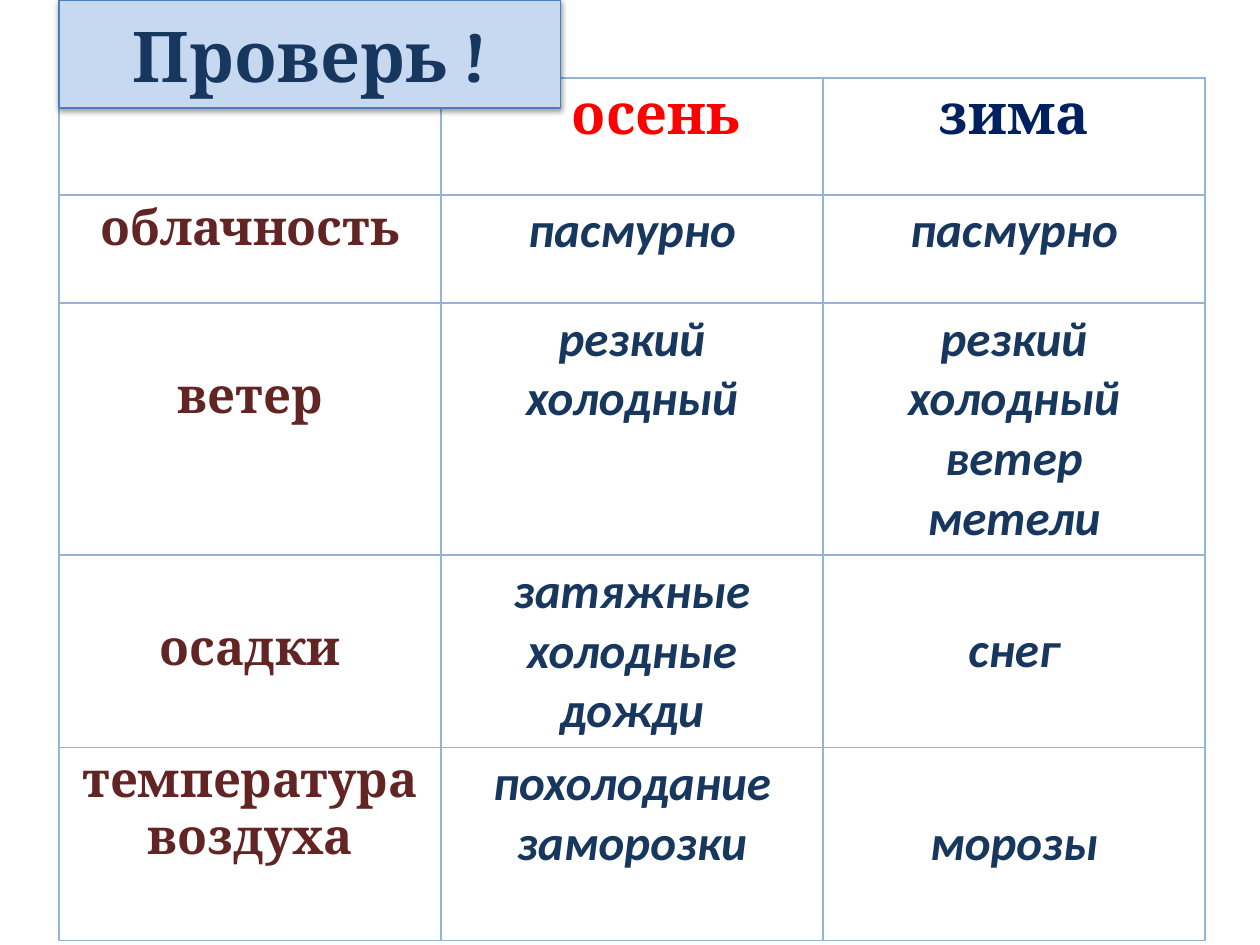
from lxml import etree
from pptx import Presentation
from pptx.dml.color import RGBColor
from pptx.enum.shapes import MSO_SHAPE as Shape
from pptx.enum.text import MSO_ANCHOR as Anchor, PP_ALIGN as Align
from pptx.oxml import parse_xml
from pptx.oxml.ns import nsdecls, qn
from pptx.util import Cm, Pt

NAVY = RGBColor(0x17, 0x37, 0x5E)
DARK_BLUE = RGBColor(0x00, 0x20, 0x60)
RED = RGBColor(0xFF, 0x00, 0x00)
MAROON = RGBColor(0x63, 0x25, 0x23)
PALE_BLUE = RGBColor(0xC6, 0xD9, 0xF1)
FRAME_BLUE = RGBColor(0x4B, 0x7E, 0xBC)
GRID_BLUE = RGBColor(0x95, 0xB3, 0xD7)
TITLE_EDGE = RGBColor(0x46, 0x7A, 0xB8)
PINK_EDGE = RGBColor(0xFF, 0xCC, 0xCC)
CREAM_EDGE = RGBColor(0xFF, 0xFF, 0xCC)

LEFT = Cm(1.19)
COLUMN_WIDTH = Cm(7.7)
ROW_HEIGHTS = [2.36, 2.18, 3.15, 3.78, 3.89]
LOWERED = Cm(1.33)  # top margin of cells whose text starts one line down
INDENTED = Cm(1.22)  # left margin of the heading beside the title

ROWS = [
    ("облачность", "пасмурно", "пасмурно"),
    ("ветер", "резкий\nхолодный", "резкий холодный ветер\nметели"),
    ("осадки", "затяжные холодные дожди", "снег"),
    ("температура воздуха", "похолодание заморозки", "морозы"),
]
LOWERED_TEXTS = {"ветер", "осадки", "снег", "морозы"}


def line_xml(tag, color, points):
    return parse_xml(
        f'<a:{tag} {nsdecls("a")} w="{Pt(points)}"><a:solidFill>'
        f'<a:srgbClr val="{color}"/></a:solidFill></a:{tag}>')


class SlideWriter:
    heading_font = "Cambria"
    body_font = "Calibri"

    def __init__(self, slide):
        self.slide = slide

    def text(self, frame, text, size, color, edge=None, edge_width=0.75):
        """Centred bold text: outlined serif with an edge, else italic sans."""
        frame.text = text
        for para in frame.paragraphs:
            para.alignment = Align.CENTER
            for span in para.runs:
                font = span.font
                font.size = Pt(size)
                font.bold = True
                font.italic = edge is None
                font.name = self.heading_font if edge else self.body_font
                font.color.rgb = color
                if edge:
                    span._r.get_or_add_rPr().insert(
                        0, line_xml("ln", edge, edge_width))

    def table(self, row_heights, column_count):
        frame = self.slide.shapes.add_table(
            len(row_heights), column_count, LEFT, Cm(1.57),
            COLUMN_WIDTH * column_count, Cm(17.27))
        table = frame.table
        table.first_row = table.horz_banding = False
        for column in table.columns:
            column.width = COLUMN_WIDTH
        for row, height in zip(table.rows, row_heights):
            row.height = Cm(height)
        for cell in table.iter_cells():
            cell.fill.background()
            properties = cell._tc.get_or_add_tcPr()
            for index, side in enumerate(("lnL", "lnR", "lnT", "lnB")):
                properties.insert(index, line_xml(side, GRID_BLUE, 1))
        return table

    def title(self, text):
        box = self.slide.shapes.add_shape(
            Shape.RECTANGLE, LEFT, 0, Cm(10.11), Cm(2.18))
        box.fill.solid()
        box.fill.fore_color.rgb = PALE_BLUE
        box.line.color.rgb = FRAME_BLUE
        box.line.width = Pt(0.75)
        box.shadow.inherit = False
        effects = box._element.spPr.find(qn("a:effectLst"))
        shadow = etree.SubElement(
            effects, qn("a:outerShdw"), blurRad=str(Pt(3.1)),
            dist=str(Pt(1.6)), dir="5400000", rotWithShape="0")
        black = etree.SubElement(shadow, qn("a:srgbClr"), val="000000")
        etree.SubElement(black, qn("a:alpha"), val="38000")
        box.text_frame.word_wrap = True
        box.text_frame.vertical_anchor = Anchor.MIDDLE
        self.text(box.text_frame, text, 40, NAVY, TITLE_EDGE, 0.83)


def main():
    deck = Presentation()
    deck.slide_width, deck.slide_height = Cm(25.4), Cm(19.05)
    page = SlideWriter(deck.slides.add_slide(deck.slide_layouts[6]))

    table = page.table(ROW_HEIGHTS, 3)
    autumn, winter = table.cell(0, 1), table.cell(0, 2)
    page.text(autumn.text_frame, "осень", 32, RED, PINK_EDGE)
    autumn.margin_left = INDENTED
    page.text(winter.text_frame, "зима", 32, DARK_BLUE, PINK_EDGE)

    for row_index, texts in enumerate(ROWS, start=1):
        for column_index, text in enumerate(texts):
            cell = table.cell(row_index, column_index)
            if column_index == 0:
                page.text(cell.text_frame, text, 28, MAROON, CREAM_EDGE)
            else:
                page.text(cell.text_frame, text, 28, NAVY)
            if text in LOWERED_TEXTS:
                cell.margin_top = LOWERED

    page.title("Проверь !")
    deck.save("out.pptx")


if __name__ == "__main__":
    main()
